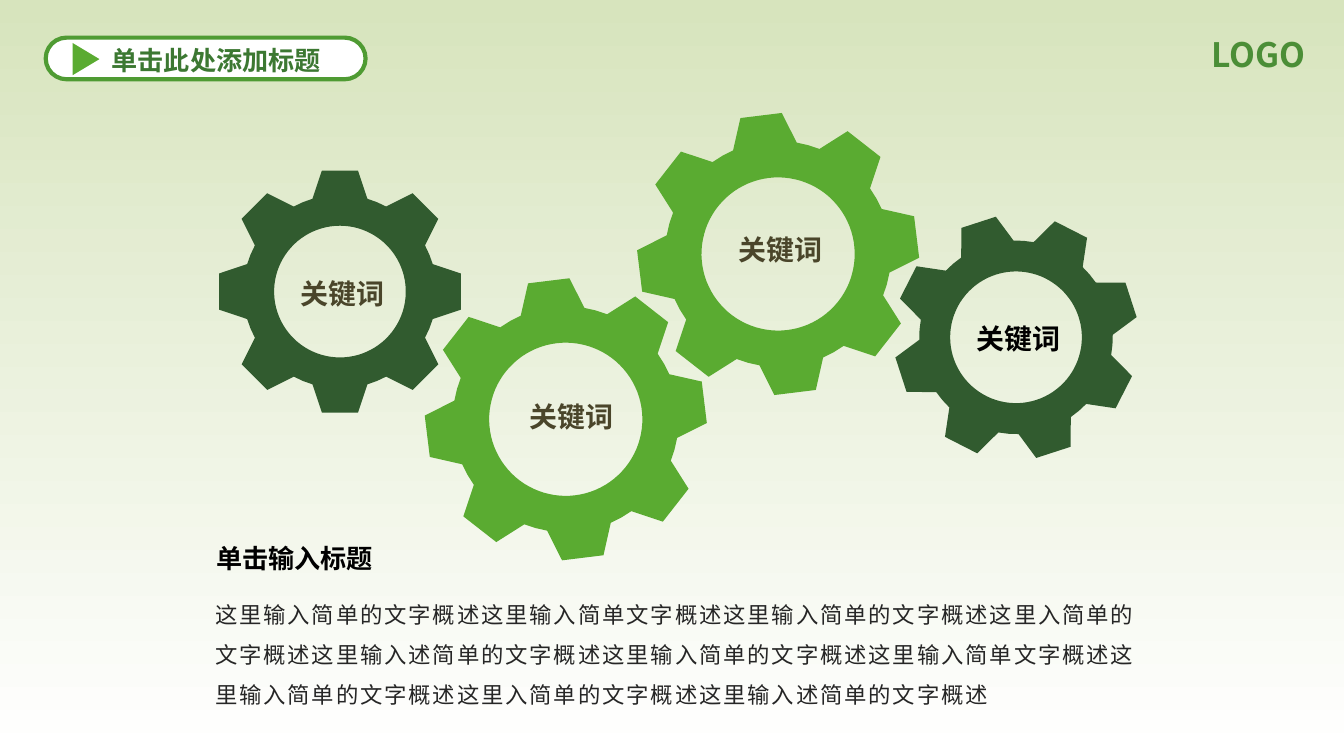
from dataclasses import dataclass
from math import cos, radians, sin

from lxml.etree import SubElement
from pptx import Presentation
from pptx.dml.color import RGBColor
from pptx.enum.shapes import MSO_SHAPE
from pptx.enum.text import MSO_ANCHOR, MSO_AUTO_SIZE, PP_ALIGN
from pptx.oxml.ns import qn
from pptx.util import Inches, Pt


@dataclass(frozen=True)
class Theme:
    sky: str = "D7E4BD"
    white: str = "FFFFFF"
    black: str = "000000"
    dark_green: str = "315B2F"
    light_green: str = "5AAB31"
    outline: str = "4F9B33"
    title: str = "3C7832"
    logo: str = "4B8E37"
    label: str = "4A452A"
    body: str = "262626"
    font: str = "Noto Sans CJK SC"
    heading_font: str = "Arial"
    logo_size: int = 18
    label_size: int = 15
    title_size: int = 14
    body_size: int = 12


THEME = Theme()
TEETH = 8
TIP_ANGLE, ROOT_ANGLE = 8.5, 16.5
SMALL_GEAR = (0.91, 0.72, 0.49)
LARGE_GEAR = (1.05, 0.84, 0.57)
BODY_TEXT = (
    "这里输入简单的文字概述这里输入简单文字概述这里输入简单的文字概述这里入简单的文字概述"
    "这里输入述简单的文字概述这里输入简单的文字概述这里输入简单文字概述这里输入简单的文字概述"
    "这里入简单的文字概述这里输入述简单的文字概述"
)


def color(value):
    return RGBColor.from_string(value)


def place(shape, left, top, width, height):
    shape.left, shape.top = Inches(left), Inches(top)
    shape.width, shape.height = Inches(width), Inches(height)


def write_text(shape, text, *, size, fill, font=THEME.font, bold=True,
               align=PP_ALIGN.LEFT, wrap=True, insets=(0.1, 0.05, 0.1, 0.05),
               line_spacing=1, tracking=0):
    frame = shape.text_frame
    frame.auto_size = MSO_AUTO_SIZE.NONE
    frame.word_wrap = wrap
    frame.vertical_anchor = MSO_ANCHOR.TOP
    frame.margin_left, frame.margin_top, frame.margin_right, frame.margin_bottom = map(Inches, insets)
    paragraph = frame.paragraphs[0]
    paragraph.alignment = align
    paragraph.line_spacing = line_spacing
    paragraph.space_before = Pt(0)
    run = paragraph.add_run()
    run.text = text
    run.font.size = Pt(size)
    run.font.bold = bold
    run.font.color.rgb = color(fill)
    run.font.name = font
    properties = run.font._element
    SubElement(properties, qn("a:ea")).set("typeface", THEME.font)
    if tracking:
        properties.set("spc", str(tracking * 100))


def add_text(slide, text, box, **text_format):
    shape = slide.shapes.add_textbox(*map(Inches, box))
    write_text(shape, text, **text_format)


def paint(shape, fill, line=None):
    shape.shadow.inherit = False
    shape.fill.solid()
    shape.fill.fore_color.rgb = color(fill)
    if line:
        shape.line.color.rgb = color(line)
        shape.line.width = Pt(2.25)
    else:
        shape.line.fill.background()


def polar_point(center, radius, angle):
    x, y = center
    return (Inches(x + radius * sin(radians(angle))),
            Inches(y - radius * cos(radians(angle))))


def add_gear(slide, center, radii, fill, rotation=0):
    tip, root, hole = radii
    step = 360 / TEETH
    profile = [(root, -ROOT_ANGLE), (tip, -TIP_ANGLE), (tip, TIP_ANGLE),
               (root, ROOT_ANGLE), (root, step / 2)]
    rim = [polar_point(center, radius, tooth * step + angle)
           for tooth in range(TEETH) for radius, angle in profile]
    opening = [polar_point(center, hole, -angle) for angle in range(0, 360, 4)]
    builder = slide.shapes.build_freeform(*rim[0], scale=1.0)
    builder.add_line_segments(rim[1:], close=True)
    builder.move_to(*opening[0])
    builder.add_line_segments(opening[1:], close=True)
    gear = builder.convert_to_shape()
    gear.rotation = rotation
    paint(gear, fill)


def add_label(slide, left, top, fill=THEME.label):
    add_text(slide, "关键词", (left, top, 0.96, 0.33), size=THEME.label_size, fill=fill,
             align=PP_ALIGN.CENTER, insets=(0.07, 0.04, 0.07, 0.04))


def add_background(slide):
    fill = slide.background.fill
    fill.gradient()
    fill.gradient_angle = 270
    for stop, position, value in zip(fill.gradient_stops, (0, 1), (THEME.sky, THEME.white)):
        stop.position = position
        stop.color.rgb = color(value)


def add_title(slide):
    pill = slide.shapes.add_shape(MSO_SHAPE.ROUNDED_RECTANGLE,
                                  *map(Inches, (0.34, 0.28, 2.38, 0.31)))
    pill.adjustments[0] = 0.5
    paint(pill, THEME.white, THEME.outline)
    title = slide.shapes.title
    place(title, 0.73, 0.28, 1.77, 0.34)
    write_text(title, "单击此处添加标题", size=THEME.title_size, fill=THEME.title, wrap=False)
    pill.element.addnext(title.element)
    marker = slide.shapes.add_shape(MSO_SHAPE.ISOSCELES_TRIANGLE,
                                    *map(Inches, (0.52, 0.34, 0.24, 0.2)))
    marker.rotation = 90
    paint(marker, THEME.light_green)


def add_description(slide):
    add_text(slide, "单击输入标题", (1.51, 3.99, 3.07, 0.34), size=THEME.title_size,
             fill=THEME.black, font=THEME.heading_font)
    body = slide.placeholders[1]
    place(body, 1.52, 4.32, 7.1, 1.28)
    properties = body.text_frame.paragraphs[0]._p.get_or_add_pPr()
    properties.set("marL", "0")
    properties.set("indent", "0")
    SubElement(properties, qn("a:buNone"))
    write_text(body, BODY_TEXT, size=THEME.body_size, fill=THEME.body, bold=False,
               insets=(0.08, 0.05, 0.1, 0.05), line_spacing=1.5, tracking=1)


def main():
    presentation = Presentation()
    presentation.slide_width = Inches(10)
    presentation.slide_height = presentation.slide_width * 9 // 16
    slide = presentation.slides.add_slide(presentation.slide_layouts[1])
    add_background(slide)

    add_gear(slide, (2.53, 2.17), SMALL_GEAR, THEME.dark_green)
    add_gear(slide, (4.21, 3.12), LARGE_GEAR, THEME.light_green, -7)
    add_gear(slide, (5.79, 1.89), LARGE_GEAR, THEME.light_green, -7)
    add_gear(slide, (7.56, 2.51), SMALL_GEAR, THEME.dark_green, -18)
    add_label(slide, 2.07, 2.02)
    add_label(slide, 3.77, 2.93)
    add_label(slide, 5.33, 1.69)
    add_label(slide, 7.1, 2.35, THEME.black)

    add_description(slide)
    add_title(slide)
    add_text(slide, "LOGO", (8.29, 0.2, 1.52, 0.4), size=THEME.logo_size,
             fill=THEME.logo, align=PP_ALIGN.RIGHT)
    presentation.save("out.pptx")


if __name__ == "__main__":
    main()
